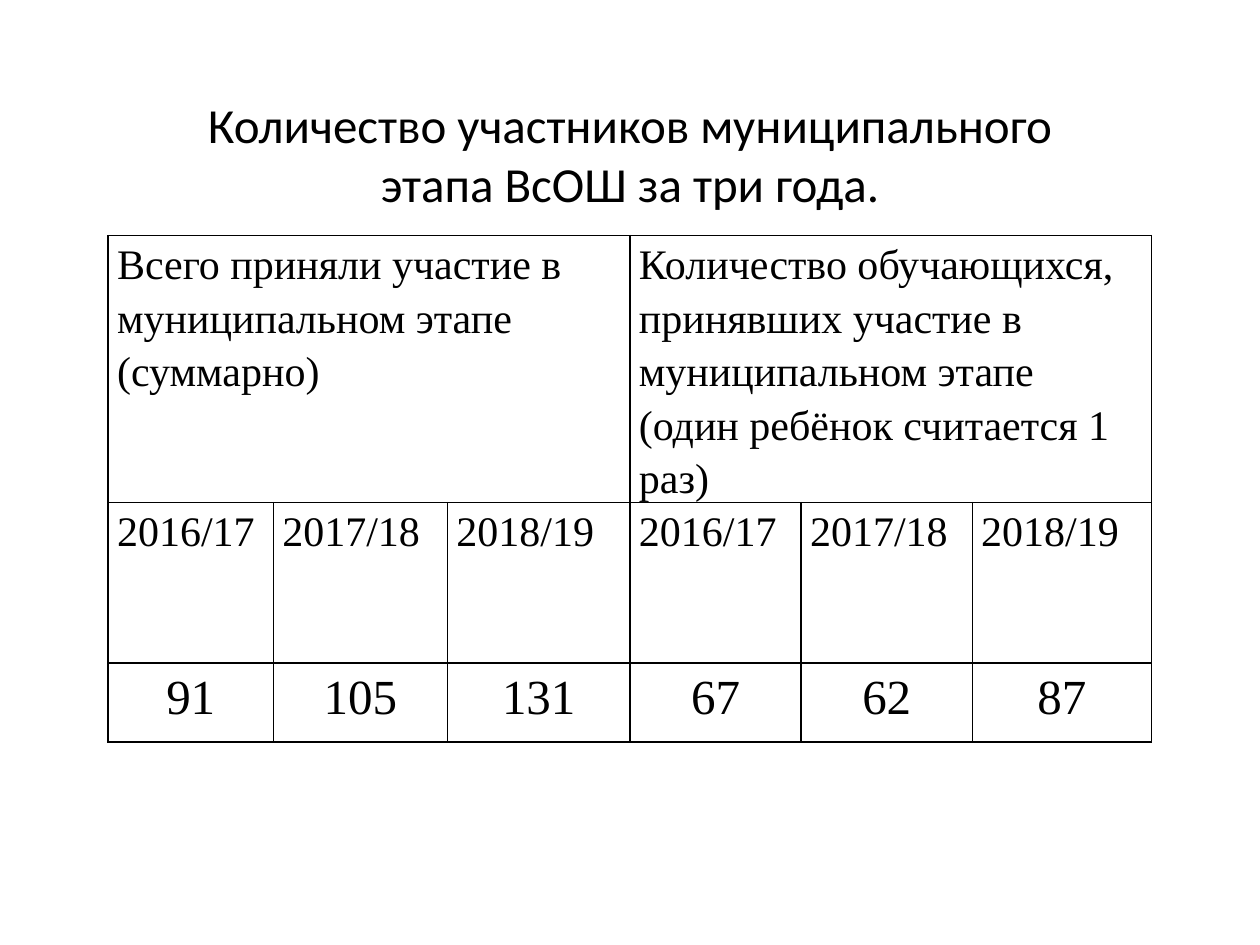
from dataclasses import dataclass

from lxml import etree
from pptx import Presentation
from pptx.dml.color import RGBColor
from pptx.enum.text import MSO_ANCHOR, PP_ALIGN
from pptx.oxml.ns import qn
from pptx.util import Cm, Pt

LEFT, CENTER = PP_ALIGN.LEFT, PP_ALIGN.CENTER
TOP, MIDDLE = MSO_ANCHOR.TOP, MSO_ANCHOR.MIDDLE
TITLE_ONLY_LAYOUT = 5


@dataclass(frozen=True)
class Theme:
    ink: str = "000000"
    title_font: str = "Calibri"
    table_font: str = "Times New Roman"
    large: float = 28
    normal: float = 24
    border: float = 1
    line_spacing: float = 1.15


@dataclass(frozen=True)
class Group:
    heading: str
    counts: tuple[int, ...]


THEME = Theme()
TITLE = "Количество участников муниципального этапа ВсОШ за три года."
YEARS = ("2016/17", "2017/18", "2018/19")
GROUPS = (
    Group("Всего приняли участие в муниципальном этапе (суммарно)", (91, 105, 131)),
    Group(
        "Количество обучающихся, принявших участие в муниципальном этапе "
        "(один ребёнок считается 1 раз)",
        (67, 62, 87),
    ),
)
COLUMN_WIDTHS = (3.33, 3.51, 3.68, 3.45, 3.45, 3.61)
ROW_HEIGHTS = (5.38, 3.23, 1.6)


def set_values(target, values: dict) -> None:
    for name, value in values.items():
        setattr(target, name, value)


def write_text(frame, text: str, font: str, size: float, align) -> None:
    para = frame.paragraphs[0]
    para.alignment = align
    span = para.add_run()
    span.text = text
    set_values(span.font, {"name": font, "size": Pt(size), "bold": False})
    span.font.color.rgb = RGBColor.from_string(THEME.ink)


def add_borders(cell) -> None:
    properties = cell._tc.get_or_add_tcPr()
    for position, side in enumerate(("lnL", "lnR", "lnT", "lnB")):
        line = etree.Element(qn(f"a:{side}"), w=str(Pt(THEME.border)))
        fill = etree.SubElement(line, qn("a:solidFill"))
        etree.SubElement(fill, qn("a:srgbClr"), val=THEME.ink)
        properties.insert(position, line)


def fill_cell(cell, text: str, size: float = THEME.normal, align=LEFT) -> None:
    write_text(cell.text_frame, text, THEME.table_font, size, align)
    cell.text_frame.paragraphs[0].line_spacing = THEME.line_spacing


def add_title(page) -> None:
    box = page.shapes.title
    set_values(box, {"left": Cm(2.97), "top": Cm(1.78), "width": Cm(19.46), "height": Cm(2.64)})
    set_values(box.text_frame, {"word_wrap": True, "vertical_anchor": MIDDLE})
    write_text(box.text_frame, TITLE, THEME.title_font, THEME.large, CENTER)


def add_participants_table(page) -> None:
    table = page.shapes.add_table(
        len(ROW_HEIGHTS), len(COLUMN_WIDTHS),
        Cm(2.18), Cm(4.75), Cm(sum(COLUMN_WIDTHS)), Cm(sum(ROW_HEIGHTS)),
    ).table
    set_values(table, {"first_row": False, "horz_banding": False})
    for column, width in zip(table.columns, COLUMN_WIDTHS):
        column.width = Cm(width)
    for row, height in zip(table.rows, ROW_HEIGHTS):
        row.height = Cm(height)

    cell_format = {
        "margin_left": Cm(0.18), "margin_right": Cm(0.18),
        "margin_top": 0, "margin_bottom": 0, "vertical_anchor": TOP,
    }
    for cell in table.iter_cells():
        set_values(cell, cell_format)
        cell.fill.background()
        add_borders(cell)

    for index, group in enumerate(GROUPS):
        first = index * len(YEARS)
        heading = table.cell(0, first)
        heading.merge(table.cell(0, first + len(YEARS) - 1))
        fill_cell(heading, group.heading)
        for column, (year, count) in enumerate(zip(YEARS, group.counts), first):
            fill_cell(table.cell(1, column), year)
            fill_cell(table.cell(2, column), str(count), THEME.large, CENTER)


def main() -> None:
    deck = Presentation()
    set_values(deck, {"slide_width": Cm(25.4), "slide_height": Cm(19.05)})
    page = deck.slides.add_slide(deck.slide_layouts[TITLE_ONLY_LAYOUT])
    add_title(page)
    add_participants_table(page)
    deck.save("out.pptx")


if __name__ == "__main__":
    main()
